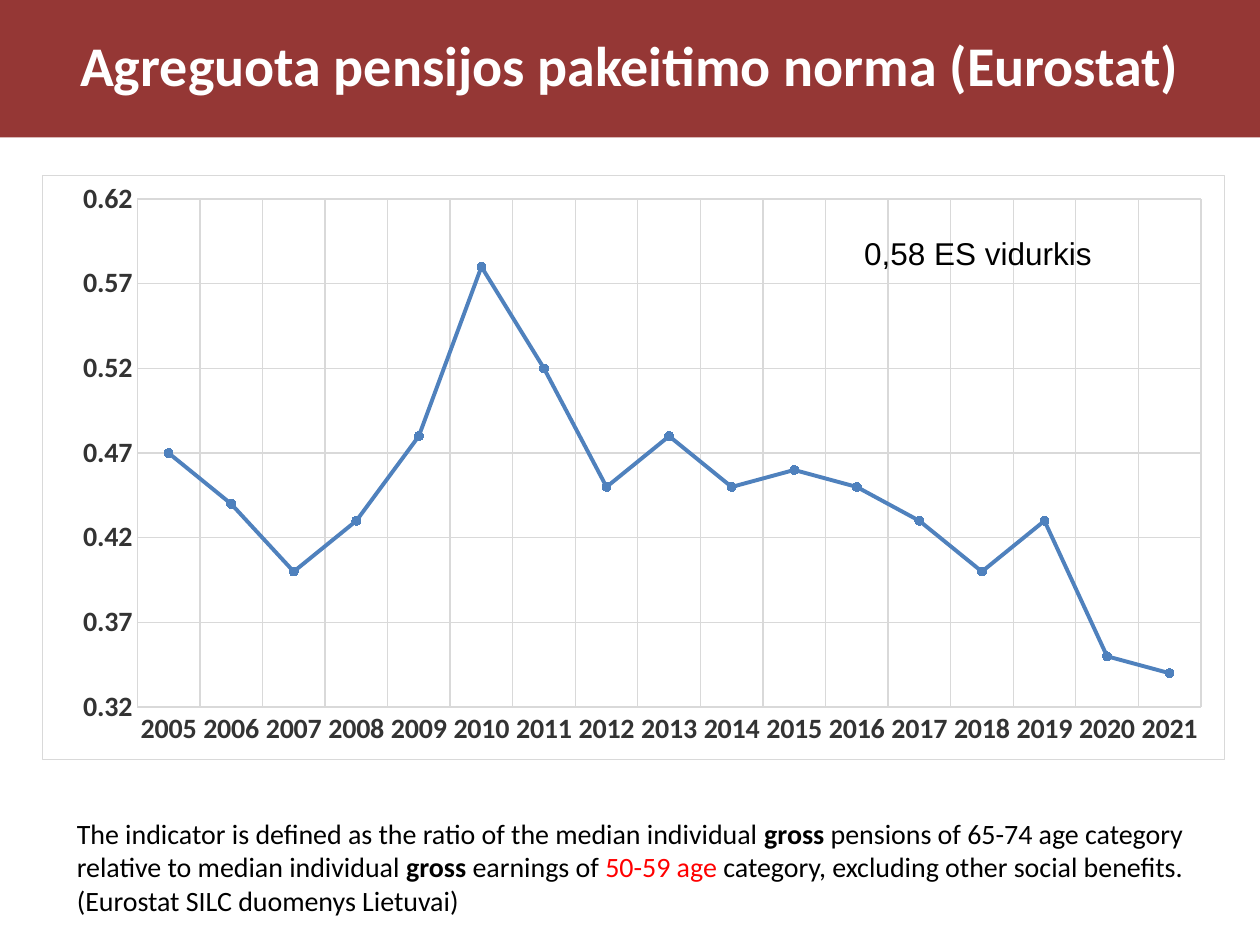
from dataclasses import dataclass

from lxml.etree import fromstring
from pptx import Presentation
from pptx.chart.data import CategoryChartData
from pptx.dml.color import RGBColor
from pptx.enum.chart import XL_CHART_TYPE, XL_MARKER_STYLE, XL_TICK_MARK
from pptx.enum.shapes import MSO_SHAPE
from pptx.enum.text import MSO_ANCHOR, PP_ALIGN
from pptx.util import Cm, Pt

CHART_NS = "http://schemas.openxmlformats.org/drawingml/2006/chart"
DRAWING_NS = "http://schemas.openxmlformats.org/drawingml/2006/main"


@dataclass(frozen=True)
class Theme:
    banner: str = "953735"
    background: str = "FFFFFF"
    text: str = "000000"
    accent: str = "FF0000"
    axis_text: str = "333333"
    grid: str = "D9D9D9"
    series: str = "4F81BD"
    body_font: str = "Calibri"
    label_font: str = "Arial"
    title_size: int = 32
    label_size: int = 18
    body_size: int = 16
    chart_size: int = 10
    grid_width: float = 0.75
    series_width: float = 2.25


class SlideBuilder:
    def __init__(self, slide, theme):
        self.slide = slide
        self.theme = theme

    def set_font(self, font, size, color, name=None, bold=None):
        font.name = name or self.theme.body_font
        font.size = Pt(size)
        font.bold = bold
        font.color.rgb = RGBColor.from_string(color)

    def set_line(self, line, color, width):
        line.color.rgb = RGBColor.from_string(color)
        line.width = Pt(width)

    def banner(self, text, left, top, width, height):
        shape = self.slide.shapes.add_shape(
            MSO_SHAPE.RECTANGLE, Cm(left), Cm(top), Cm(width), Cm(height))
        shape.shadow.inherit = False
        shape.fill.solid()
        shape.fill.fore_color.rgb = RGBColor.from_string(self.theme.banner)
        shape.line.fill.background()
        shape.text_frame.vertical_anchor = MSO_ANCHOR.MIDDLE
        paragraph = shape.text_frame.paragraphs[0]
        paragraph.text = text
        paragraph.alignment = PP_ALIGN.CENTER
        paragraph.line_spacing = 0.9
        self.set_font(paragraph.font, self.theme.title_size,
                      self.theme.background, bold=True)

    def text(self, runs, left, top, width, height, size, font_name):
        """Add a text box from (text, bold, color) runs; color None inherits."""
        box = self.slide.shapes.add_textbox(
            Cm(left), Cm(top), Cm(width), Cm(height))
        box.text_frame.word_wrap = True
        paragraph = box.text_frame.paragraphs[0]
        self.set_font(paragraph.font, size, self.theme.text, font_name)
        for content, bold, color in runs:
            run = paragraph.add_run()
            run.text = content
            if bold:
                run.font.bold = True
            if color:
                run.font.color.rgb = RGBColor.from_string(color)

    def line_chart(self, name, values, left, top, width, height):
        data = CategoryChartData(number_format="0.00")
        data.categories = list(values)
        data.add_series(name, values.values())
        chart = self.slide.shapes.add_chart(
            XL_CHART_TYPE.LINE_MARKERS,
            Cm(left), Cm(top), Cm(width), Cm(height), data).chart
        chart.has_legend = False
        chart.has_title = False
        self.set_font(chart.font, self.theme.chart_size, self.theme.text)
        chart.plots[0].vary_by_categories = False
        self.style_series(chart.plots[0].series[0])
        for axis in (chart.category_axis, chart.value_axis):
            self.style_axis(axis)
        self.set_line(chart.category_axis.format.line,
                      self.theme.grid, self.theme.grid_width)
        value_axis = chart.value_axis
        value_axis.format.line.fill.background()
        value_axis.minimum_scale = 0.32
        value_axis.maximum_scale = 0.62
        value_axis.major_unit = 0.05
        value_axis.tick_labels.number_format = "0.00"
        value_axis.tick_labels.number_format_is_linked = False
        self.frame_chart(chart)
        self.place_plot(chart, x=0.08, y=0.04, w=0.9, h=0.87)

    def style_series(self, series):
        color = self.theme.series
        series.smooth = False
        self.set_line(series.format.line, color, self.theme.series_width)
        series.marker.style = XL_MARKER_STYLE.CIRCLE
        series.marker.size = 5
        series.marker.format.fill.solid()
        series.marker.format.fill.fore_color.rgb = RGBColor.from_string(color)
        self.set_line(series.marker.format.line, color, self.theme.grid_width)

    def style_axis(self, axis):
        axis.major_tick_mark = XL_TICK_MARK.NONE
        axis.minor_tick_mark = XL_TICK_MARK.NONE
        axis.has_major_gridlines = True
        self.set_line(axis.major_gridlines.format.line,
                      self.theme.grid, self.theme.grid_width)
        self.set_font(axis.tick_labels.font, self.theme.body_size,
                      self.theme.axis_text, bold=True)

    def frame_chart(self, chart):
        """Give the chart area its fill and border."""
        chart_space = chart.element
        chart_space.find(f"{{{CHART_NS}}}chart").addnext(fromstring(
            f'<c:spPr xmlns:c="{CHART_NS}" xmlns:a="{DRAWING_NS}">'
            f'<a:solidFill><a:srgbClr val="{self.theme.background}"/></a:solidFill>'
            f'<a:ln w="{Pt(self.theme.grid_width)}"><a:solidFill>'
            f'<a:srgbClr val="{self.theme.grid}"/></a:solidFill></a:ln></c:spPr>'))

    def place_plot(self, chart, **fractions):
        """Fix the inner plot area as fractions of the chart."""
        plot_area = chart.element.find(f".//{{{CHART_NS}}}plotArea")
        for layout in plot_area.findall(f"{{{CHART_NS}}}layout"):
            plot_area.remove(layout)
        modes = '<c:xMode val="edge"/><c:yMode val="edge"/>'
        sizes = "".join(f'<c:{key} val="{value}"/>'
                        for key, value in fractions.items())
        plot_area.insert(0, fromstring(
            f'<c:layout xmlns:c="{CHART_NS}"><c:manualLayout>'
            f'<c:layoutTarget val="inner"/>{modes}{sizes}'
            f'</c:manualLayout></c:layout>'))


def main():
    presentation = Presentation()
    presentation.slide_width = Cm(25.4)
    presentation.slide_height = Cm(19.05)
    slide = presentation.slides.add_slide(presentation.slide_layouts[6])
    theme = Theme()
    builder = SlideBuilder(slide, theme)

    builder.banner("Agreguota pensijos pakeitimo norma (Eurostat)",
                   0, 0, 25.4, 2.77)
    definition = [
        ("The indicator is defined as the ratio of the median individual ", False, None),
        ("gross", True, None),
        (" pensions of 65-74 age category relative to median individual ", False, None),
        ("gross", True, None),
        (" earnings of ", False, None),
        ("50-59 age ", False, theme.accent),
        ("category, excluding other social benefits. "
         "(Eurostat SILC duomenys Lietuvai)", False, None),
    ]
    builder.text(definition, 1.3, 16.33, 23.4, 2.31,
                 theme.body_size, theme.body_font)
    rates = [0.47, 0.44, 0.40, 0.43, 0.48, 0.58, 0.52, 0.45, 0.48,
             0.45, 0.46, 0.45, 0.43, 0.40, 0.43, 0.35, 0.34]
    rate_by_year = {str(year): rate for year, rate in enumerate(rates, 2005)}
    builder.line_chart("Series 1", rate_by_year, 0.85, 3.53, 23.85, 11.8)
    builder.text([("0,58 ES vidurkis", False, None)], 17.17, 4.6, 7.6, 1.02,
                 theme.label_size, theme.label_font)

    presentation.save("out.pptx")


if __name__ == "__main__":
    main()
